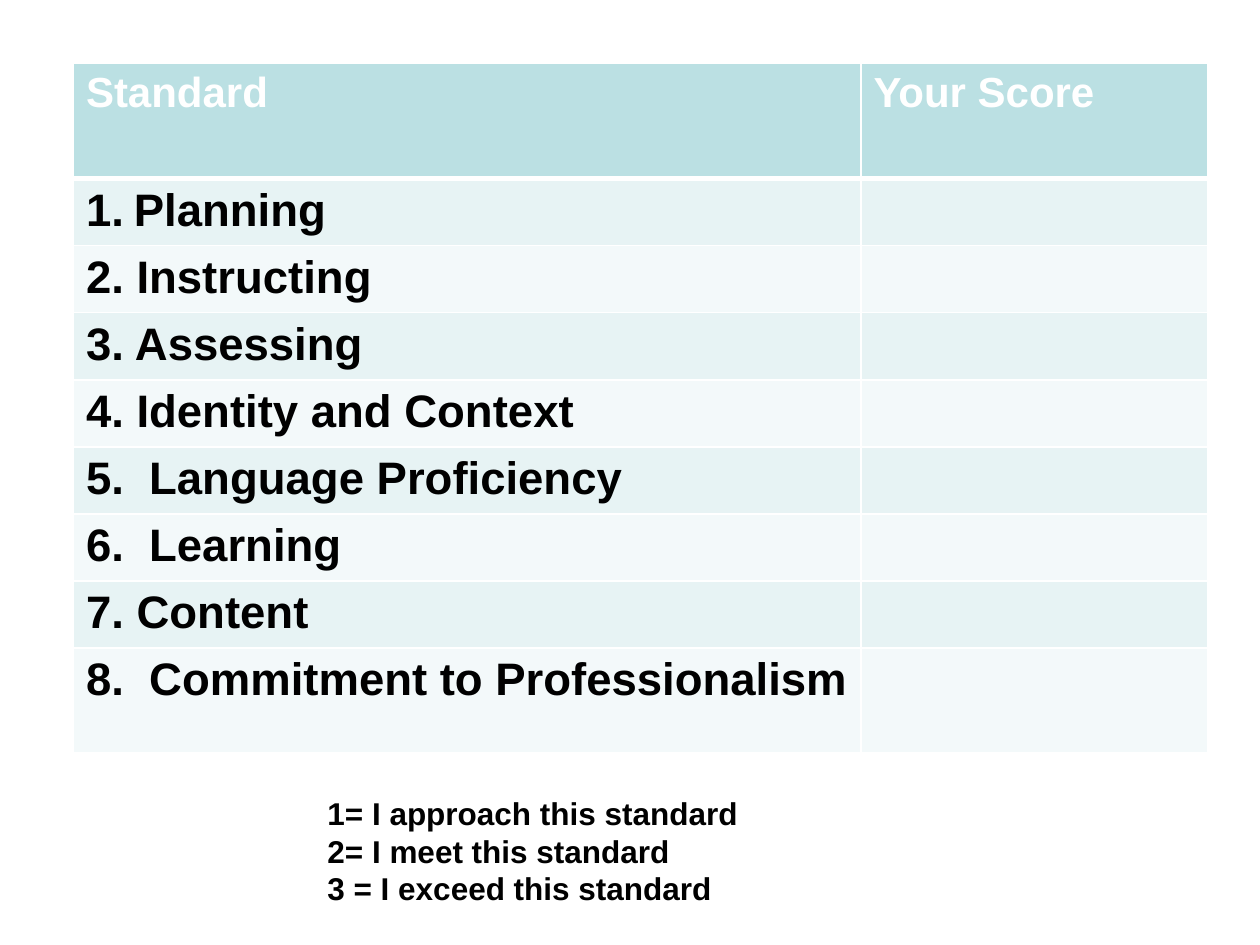
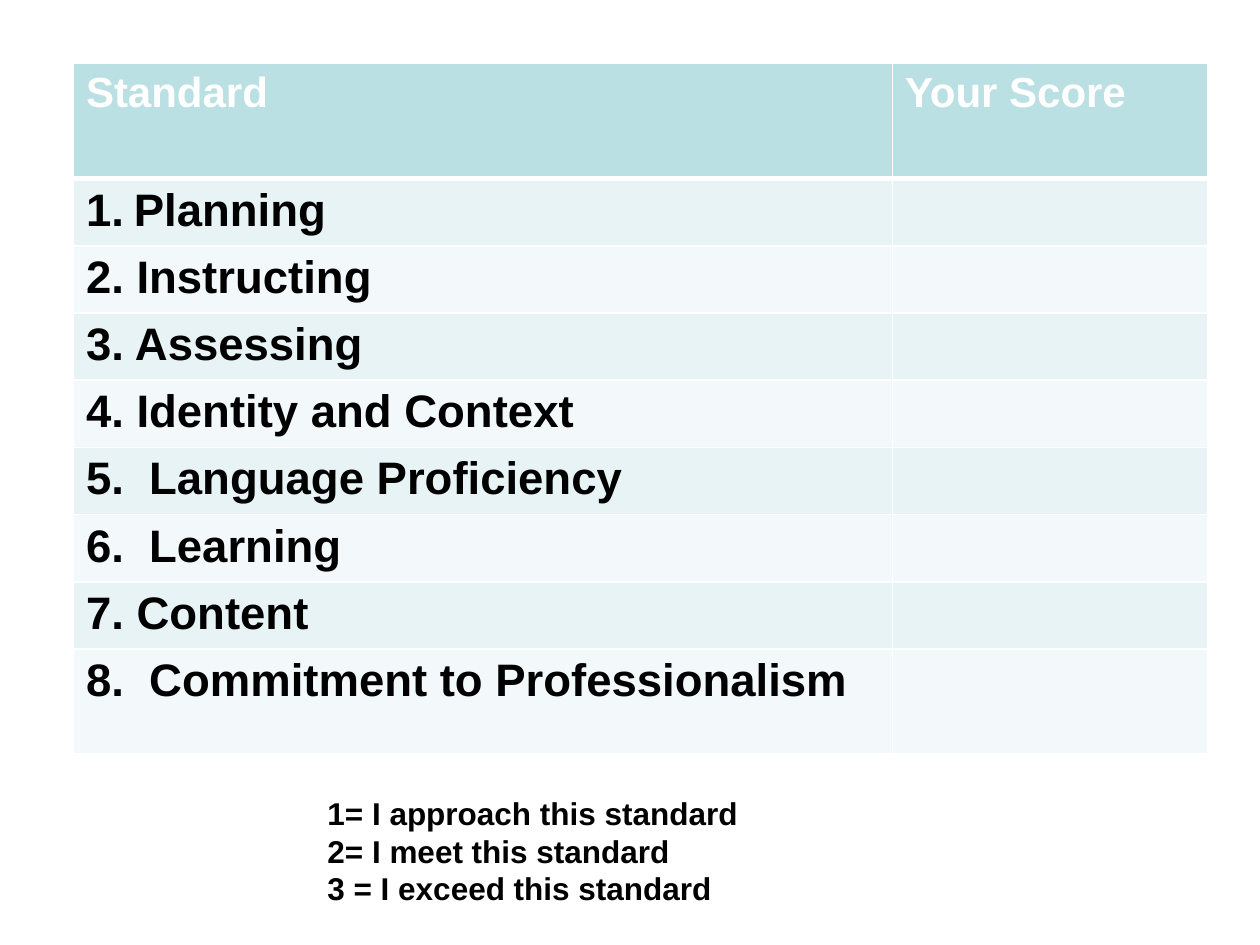
"""Build two self-scoring slides that list eight teaching standards."""
from lxml import etree
from pptx import Presentation
from pptx.dml.color import RGBColor
from pptx.enum.text import MSO_AUTO_SIZE
from pptx.oxml.ns import qn
from pptx.util import Inches, Pt

FIT_SHAPE = MSO_AUTO_SIZE.SHAPE_TO_FIT_TEXT
UNIT = 0.25
WHITE, BLACK, HEADER = "FFFFFF", "000000", "BBE0E3"
BANDS = ("E7F3F4", "F3F9FA")
HEAD_TEXT = {"size": Pt(24), "color": WHITE}
BODY_TEXT = {"size": Pt(26), "color": BLACK}
NOTE_TEXT = {"size": Pt(18), "color": BLACK}

HEADINGS = ("Standard", "Your Score")
STANDARDS = (
    "Planning",
    "2. Instructing",
    "3. Assessing",
    "4. Identity and Context",
    "5.  Language Proficiency",
    "6.  Learning",
    "7. Content",
    "8.  Commitment to Professionalism",
)
SCALE = (
    "1= I approach this standard",
    "2= I meet this standard",
    "3 = I exceed this standard",
)
ROW_HEIGHTS = [3.67] + [2.13] * 7 + [3.33]
COLUMN_WIDTHS = ((25, 11), (26, 10))


def rgb(value):
    """Turn a hex string into a colour."""
    return RGBColor.from_string(value)


def grid(n):
    """Turn a count of grid units into a length."""
    return Inches(n * UNIT)


class Deck:
    """Hold the style and the current slide."""

    def __init__(self, font="Arial"):
        """Start an empty deck of 40 by 30 grid units."""
        self.font = font
        self.prs = Presentation()
        self.prs.slide_width, self.prs.slide_height = grid(40), grid(30)

    def add_slide(self):
        """Add a blank slide and make it current."""
        self.slide = self.prs.slides.add_slide(self.prs.slide_layouts[6])

    def add_text(self, p, text, style):
        """Add one bold run in the deck's font."""
        r = p.add_run()
        r.text = text
        for name, value in {"name": self.font, "bold": True, **style}.items():
            if name == "color":
                r.font.color.rgb = rgb(value)
            else:
                setattr(r.font, name, value)

    def number(self, p):
        """Give a paragraph an automatic number with a hanging indent."""
        pPr = p._p.get_or_add_pPr()
        pPr.set("marL", str(Inches(0.38)))
        pPr.set("indent", str(-Inches(0.38)))
        etree.SubElement(pPr, qn("a:buFont"), typeface="+mj-lt")
        etree.SubElement(pPr, qn("a:buAutoNum"), type="arabicPeriod")

    def borders(self, cell, top, bottom):
        """Draw white cell borders with the given top and bottom widths."""
        tcPr = cell._tc.get_or_add_tcPr()
        sides = {"L": 1, "R": 1, "T": top, "B": bottom}
        for i, (side, width) in enumerate(sides.items()):
            ln = etree.Element(qn("a:ln" + side), w=str(Pt(width)))
            fill = etree.SubElement(ln, qn("a:solidFill"))
            etree.SubElement(fill, qn("a:srgbClr"), val=WHITE)
            tcPr.insert(i, ln)

    def score_table(self, left, top, widths):
        """Add the table of standards with an empty score column."""
        rows = [HEADINGS] + [(text, "") for text in STANDARDS]
        sp = self.slide.shapes.add_table(
            len(rows), len(widths), grid(left), grid(top),
            grid(sum(widths)), grid(sum(ROW_HEIGHTS)))
        table = sp.table
        for column, width in zip(table.columns, widths):
            column.width = grid(width)
        for i, (row, height) in enumerate(zip(table.rows, ROW_HEIGHTS)):
            row.height = grid(height)
            for cell, text in zip(row.cells, rows[i]):
                cell.fill.solid()
                cell.fill.fore_color.rgb = rgb(BANDS[(i - 1) % 2] if i else HEADER)
                self.borders(cell, 3 if i == 1 else 1, 1 if i else 3)
                if text:
                    p = cell.text_frame.paragraphs[0]
                    self.add_text(p, text, BODY_TEXT if i else HEAD_TEXT)
        self.number(table.cell(1, 0).text_frame.paragraphs[0])

    def note(self, left, top, width, height, lines):
        """Add a text box with one paragraph a line."""
        sp = self.slide.shapes.add_textbox(*map(grid, (left, top, width, height)))
        tf = sp.text_frame
        tf.word_wrap, tf.auto_size = True, FIT_SHAPE
        for i, line in enumerate(lines):
            p = tf.add_paragraph() if i else tf.paragraphs[0]
            self.add_text(p, line, NOTE_TEXT)


def main():
    """Build both slides and save them."""
    deck = Deck()
    for widths in COLUMN_WIDTHS:
        deck.add_slide()
        deck.score_table(2.33, 2, widths)
        deck.note(10, 25, 17, 4.04, SCALE)
    deck.prs.save("out.pptx")


if __name__ == "__main__":
    main()
